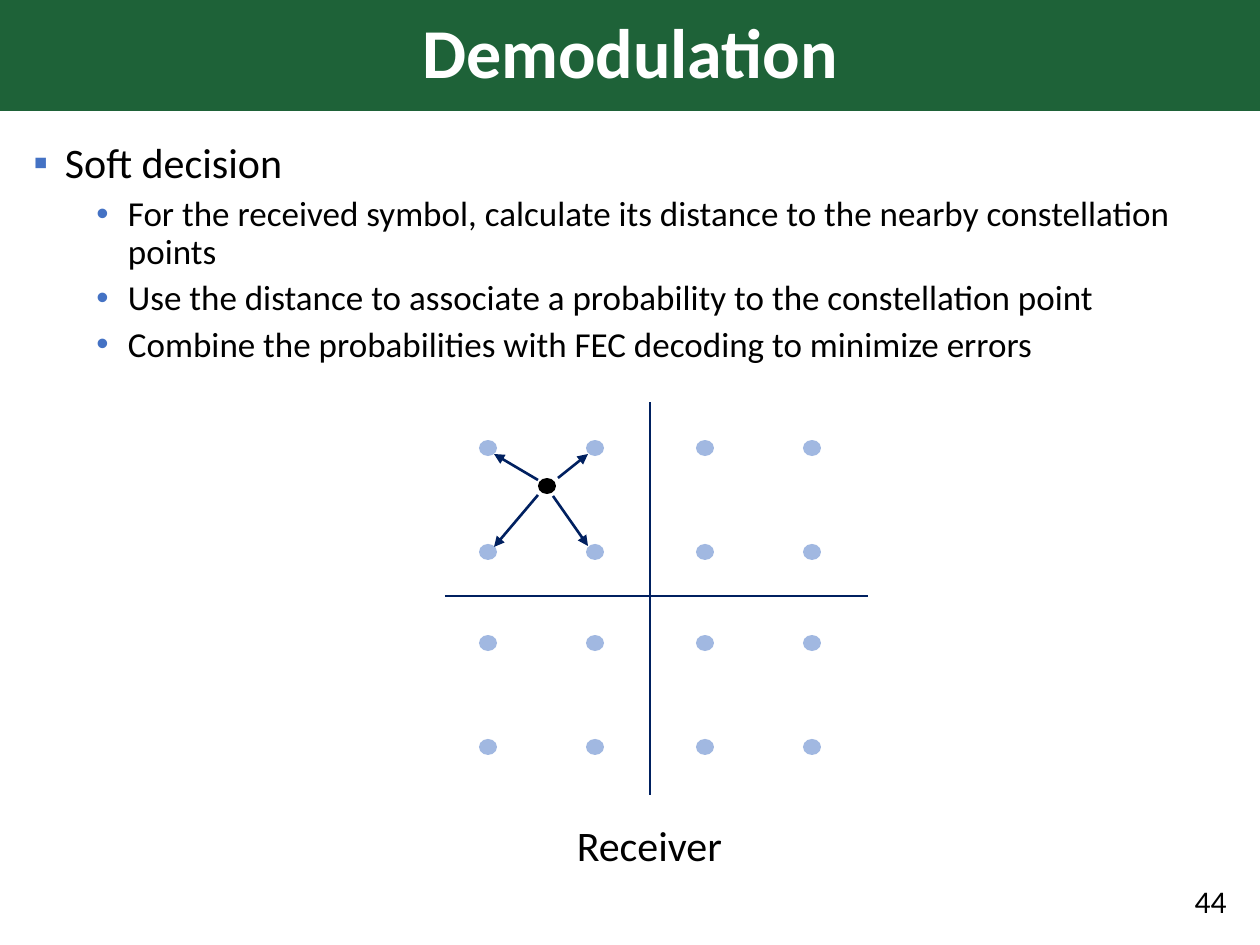
from lxml import etree
from pptx import Presentation
from pptx.dml.color import RGBColor
from pptx.enum.shapes import MSO_CONNECTOR as Connector, MSO_SHAPE as Shape
from pptx.enum.text import MSO_ANCHOR as Anchor, PP_ALIGN as Align
from pptx.oxml.ns import qn
from pptx.util import Emu, Pt

PX = 914400 / 126
GREEN = RGBColor(0x1E, 0x62, 0x38)
BLUE = RGBColor(0x44, 0x72, 0xC4)
NAVY = RGBColor(0x00, 0x20, 0x60)
BLACK = RGBColor(0, 0, 0)
WHITE = RGBColor(255, 255, 255)


def px(*lengths):
    return [Emu(round(n * PX)) for n in lengths]


def write(frame, text, size=24, color=BLACK, bold=False, align=Align.LEFT,
          anchor=Anchor.TOP, spacing=None, before=0, bullet=None, indent=0, level=0):
    """Add one formatted paragraph, using the empty first one if there is one."""
    frame.word_wrap = True
    frame.vertical_anchor = anchor
    first = frame.paragraphs[0]
    para = frame.add_paragraph() if first.runs else first
    para.level = level
    para.alignment = align
    para.line_spacing = spacing
    para.space_before = Pt(before)
    run = para.add_run()
    run.text = text
    font = run.font
    font.name, font.size, font.bold = "Calibri", Pt(size), bold
    font.color.rgb = color
    if bullet:
        props = para._p.get_or_add_pPr()
        props.set("marL", str(Pt(indent)))
        props.set("indent", str(-Pt(18)))
        bullet_color = etree.SubElement(props, qn("a:buClr"))
        etree.SubElement(bullet_color, qn("a:srgbClr"), val=str(BLUE))
        etree.SubElement(props, qn("a:buFont"), typeface="Arial")
        etree.SubElement(props, qn("a:buChar"), char=bullet)


prs = Presentation()
prs.slide_width, prs.slide_height = px(1260, 945)
slide = prs.slides.add_slide(prs.slide_layouts[6])
shapes = slide.shapes

# Title band
title = shapes.add_shape(Shape.RECTANGLE, *px(0, 0, 1260, 111))
title.shadow.inherit = False
title.fill.solid()
title.fill.fore_color.rgb = GREEN
title.line.fill.background()
write(title.text_frame, "Demodulation", size=40, color=WHITE, bold=True,
      align=Align.CENTER, anchor=Anchor.MIDDLE, spacing=0.9)

# Bullets
body = shapes.add_textbox(*px(21, 136, 1216, 250)).text_frame
write(body, "Soft decision", spacing=0.9, before=10, bullet="▪", indent=18)
for point in (
    "For the received symbol, calculate its distance to the nearby constellation points",
    "Use the distance to associate a probability to the constellation point",
    "Combine the probabilities with FEC decoding to minimize errors",
):
    write(body, point, size=20, spacing=0.9, before=5, bullet="•", indent=54, level=1)

# Slide number
number = shapes.add_textbox(*px(955, 876, 284, 50)).text_frame
write(number, "44", size=18, align=Align.RIGHT, anchor=Anchor.MIDDLE)

# Constellation points and the received symbol
constellation = [(x, y) for y in (440, 544, 635, 739) for x in (479, 586, 696, 803)]
received = (538, 478)
for x, y in constellation + [received]:
    dot = shapes.add_shape(Shape.OVAL, *px(x, y, 18, 16))
    dot.shadow.inherit = False
    dot.line.fill.background()
    dot.fill.solid()
    if (x, y) == received:
        dot.fill.fore_color.rgb = BLACK
    else:
        dot.fill.fore_color.rgb = BLUE
        tint = dot._element.spPr.find(qn("a:solidFill"))[0]
        etree.SubElement(tint, qn("a:alpha"), val="50000")

# Axes, then arrows from the received symbol to its four neighbours
axes = [(650, 795, 650, 402), (445, 596, 868, 596)]
distances = [(558, 478, 588, 454), (538, 480, 494, 454),
             (538, 495, 494, 547), (553, 496, 588, 546)]
for ends in axes + distances:
    line = shapes.add_connector(Connector.STRAIGHT, *px(*ends))
    line.line.color.rgb = NAVY
    line.line.width = Pt(1.5)
    if ends in distances:
        etree.SubElement(line.line._get_or_add_ln(), qn("a:tailEnd"), type="triangle")
    etree.SubElement(line._element.spPr, qn("a:effectLst"))

# Caption
caption = shapes.add_textbox(*px(479, 813, 341, 63)).text_frame
write(caption, "Receiver", align=Align.CENTER)

prs.save("out.pptx")
